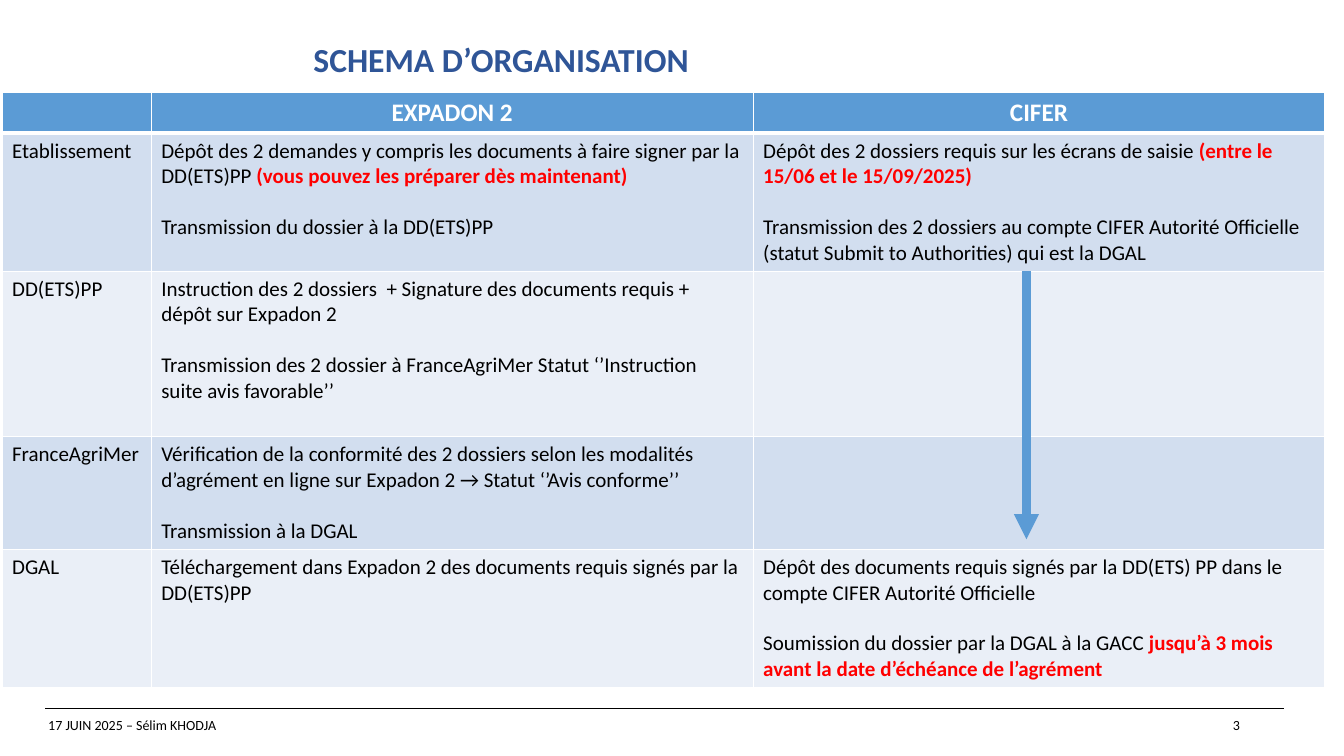
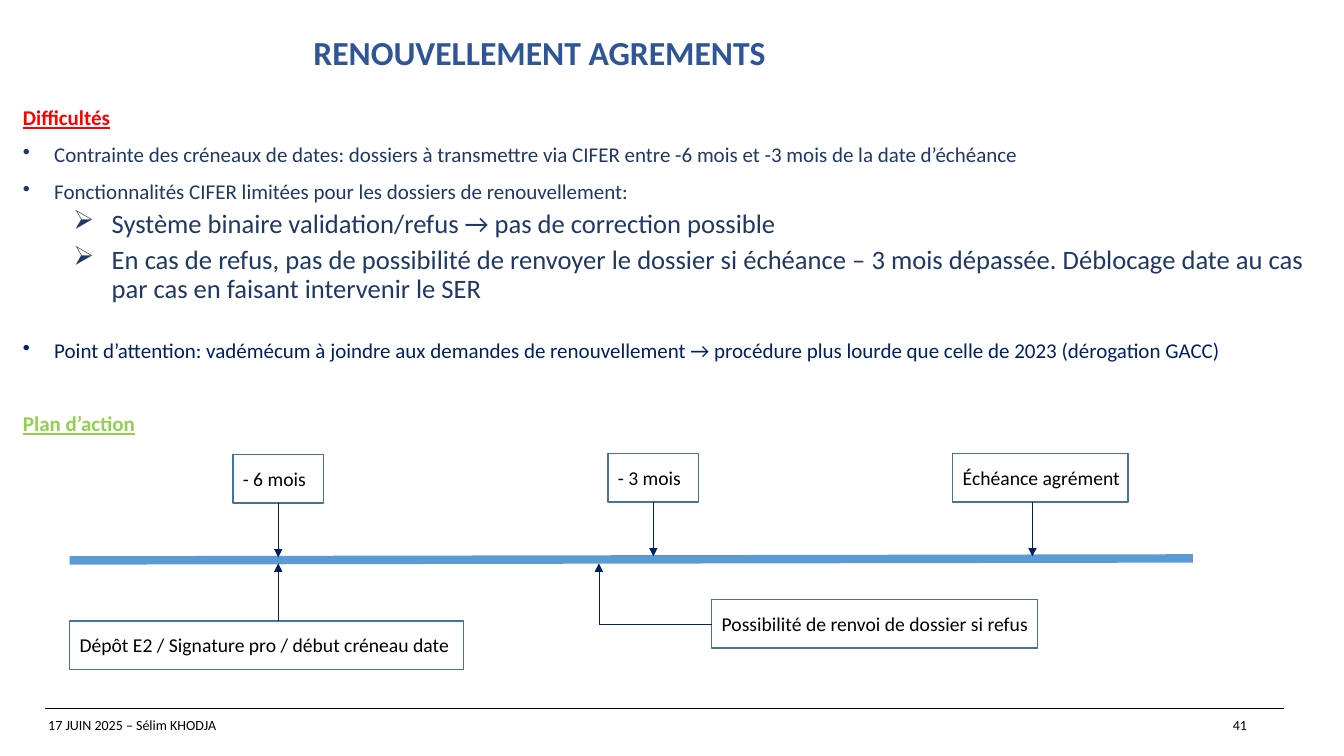
from lxml.etree import SubElement
from pptx import Presentation
from pptx.dml.color import RGBColor
from pptx.enum.shapes import MSO_CONNECTOR, MSO_SHAPE
from pptx.enum.text import MSO_ANCHOR as Anchor, PP_ALIGN as Align
from pptx.oxml.ns import qn
from pptx.util import Pt

PX = 9144
FONT = "Calibri"
BLACK = RGBColor(0x00, 0x00, 0x00)
WHITE = RGBColor(0xFF, 0xFF, 0xFF)
RED = RGBColor(0xFF, 0x00, 0x00)
GREEN = RGBColor(0x92, 0xD0, 0x50)
BLUE = RGBColor(0x5B, 0x9B, 0xD5)
TITLE_BLUE = RGBColor(0x2F, 0x55, 0x97)
TEXT_BLUE = RGBColor(0x20, 0x38, 0x64)
NAVY = RGBColor(0x00, 0x20, 0x60)
BOX_LINE = RGBColor(0x43, 0x73, 0x9E)
BANDS = (RGBColor(0xD2, 0xDE, 0xEF), RGBColor(0xEA, 0xEF, 0xF7))

COLUMN_WIDTHS = (148, 597, 567)
ROW_HEIGHTS = (40, 137, 164, 112, 137)
HEADERS = ("", "EXPADON 2", "CIFER")
ROWS = (
    (
        ["Etablissement"],
        [
            ("Dépôt des 2 demandes y compris les documents à faire signer par la DD(ETS)PP ",
             "(vous pouvez les préparer dès maintenant)"),
            "Transmission du dossier à la DD(ETS)PP",
        ],
        [
            ("Dépôt des 2 dossiers requis sur les écrans de saisie ",
             "(entre le 15/06 et le 15/09/2025)"),
            "Transmission des 2 dossiers au compte CIFER Autorité Officielle "
            "(statut Submit to Authorities) qui est la DGAL",
        ],
    ),
    (
        ["DD(ETS)PP"],
        [
            "Instruction des 2 dossiers  + Signature des documents requis + dépôt sur Expadon 2",
            "Transmission des 2 dossier à FranceAgriMer Statut ‘’Instruction suite avis favorable’’",
        ],
        [],
    ),
    (
        ["FranceAgriMer"],
        [
            "Vérification de la conformité des 2 dossiers selon les modalités d’agrément "
            "en ligne sur Expadon 2 → Statut ‘’Avis conforme’’",
            "Transmission à la DGAL",
        ],
        [],
    ),
    (
        ["DGAL"],
        ["Téléchargement dans Expadon 2 des documents requis signés par la DD(ETS)PP"],
        [
            "Dépôt des documents requis signés par la DD(ETS) PP dans le compte "
            "CIFER Autorité Officielle",
            ("Soumission du dossier par la DGAL à la GACC ",
             "jusqu’à 3 mois avant la date d’échéance de l’agrément"),
        ],
    ),
)

HEADING = dict(bold=True, underline=True)
BULLET = dict(bullet="•", margin=31, hanging=31, before=10)
ARROW_BULLET = dict(bullet="➢", margin=88, hanging=38, before=5, level=1, size=19)
BODY = (
    ("Difficultés", dict(HEADING, color=RED)),
    ("Contrainte des créneaux de dates: dossiers à transmettre via CIFER "
     "entre -6 mois et -3 mois de la date d’échéance", BULLET),
    ("Fonctionnalités CIFER limitées pour les dossiers de renouvellement:", BULLET),
    ("Système binaire validation/refus → pas de correction possible", ARROW_BULLET),
    ("En cas de refus, pas de possibilité de renvoyer le dossier si échéance – 3 mois dépassée. "
     "Déblocage date au cas par cas en faisant intervenir le SER", ARROW_BULLET),
    ("Point d’attention: vadémécum à joindre aux demandes de renouvellement → "
     "procédure plus lourde que celle de 2023 (dérogation GACC)",
     dict(BULLET, before=26, color=NAVY)),
    ("Plan d’action", dict(HEADING, before=36, color=GREEN)),
)


def add_bullet(paragraph, character, margin, hanging):
    properties = paragraph._p.get_or_add_pPr()
    properties.set("marL", str(margin * PX))
    properties.set("indent", str(-hanging * PX))
    SubElement(properties, qn("a:buChar"), char=character)


def write_text(frame, text, size=15, color=BLACK, bold=False, underline=False,
               align=Align.LEFT, spacing=None, before=0, level=0,
               bullet=None, margin=0, hanging=0):
    paragraph = frame.add_paragraph() if frame.text else frame.paragraphs[0]
    paragraph.alignment = align
    paragraph.level = level
    paragraph.space_before = Pt(before)
    if spacing:
        paragraph.line_spacing = spacing
    if bullet:
        add_bullet(paragraph, bullet, margin, hanging)
    plain, *alert = (text,) if isinstance(text, str) else text
    for words, tint, weight in [(plain, color, bold), *((part, RED, True) for part in alert)]:
        run = paragraph.add_run()
        run.text = words
        font = run.font
        font.name, font.size, font.bold = FONT, Pt(size), weight
        font.underline = underline
        font.color.rgb = tint


def add_frame(slide, left, top, width, height, anchor=Anchor.TOP, wrap=True):
    box = slide.shapes.add_textbox(left * PX, top * PX, width * PX, height * PX)
    frame = box.text_frame
    frame.word_wrap = wrap
    frame.vertical_anchor = anchor
    return frame


def add_line(slide, start, end, color, width, arrow=False, box=None, site=0):
    points = [value * PX for value in (*start, *end)]
    connector = slide.shapes.add_connector(MSO_CONNECTOR.STRAIGHT, *points)
    if box is not None:
        connector.begin_connect(box, site)
    connector.line.color.rgb = color
    connector.line.width = Pt(width)
    properties = connector.element.spPr
    if arrow:
        SubElement(properties.find(qn("a:ln")), qn("a:tailEnd"), type="triangle")
    SubElement(properties, qn("a:effectLst"))


def add_label(slide, text, left, top, width):
    box = slide.shapes.add_shape(
        MSO_SHAPE.RECTANGLE, left * PX, top * PX, width * PX, 48 * PX)
    box.shadow.inherit = False
    box.fill.solid()
    box.fill.fore_color.rgb = WHITE
    box.line.color.rgb = BOX_LINE
    box.line.width = Pt(1)
    box.text_frame.word_wrap = False
    box.text_frame.vertical_anchor = Anchor.MIDDLE
    write_text(box.text_frame, text, size=14)
    return box


def style_cell(cell, fill, bottom):
    properties = cell._tc.get_or_add_tcPr()
    for side, width in (("L", 1), ("R", 1), ("T", 1), ("B", bottom)):
        border = SubElement(properties, qn(f"a:ln{side}"), w=str(Pt(width)))
        solid = SubElement(border, qn("a:solidFill"))
        SubElement(solid, qn("a:srgbClr"), val=str(WHITE))
    cell.fill.solid()
    cell.fill.fore_color.rgb = fill


def add_organisation_table(slide):
    table = slide.shapes.add_table(
        len(ROW_HEIGHTS), len(COLUMN_WIDTHS), 2 * PX, 92 * PX,
        sum(COLUMN_WIDTHS) * PX, sum(ROW_HEIGHTS) * PX).table
    for column, width in zip(table.columns, COLUMN_WIDTHS):
        column.width = width * PX
    for row, height in zip(table.rows, ROW_HEIGHTS):
        row.height = height * PX
    for cell, header in zip(table.rows[0].cells, HEADERS):
        style_cell(cell, BLUE, 3)
        if header:
            write_text(cell.text_frame, header, size=18, color=WHITE, bold=True,
                       align=Align.CENTER)
    for index, contents in enumerate(ROWS):
        for cell, texts in zip(table.rows[index + 1].cells, contents):
            style_cell(cell, BANDS[index % 2], 1)
            for position, text in enumerate(texts):
                write_text(cell.text_frame, text, before=18 if position else 0)


def add_slide(presentation, title, title_top, number):
    slide = presentation.slides.add_slide(presentation.slide_layouts[6])
    write_text(add_frame(slide, 301, title_top, 569, 48, Anchor.MIDDLE), title,
               size=24, color=TITLE_BLUE, bold=True, spacing=0.9)
    add_line(slide, (45, 703), (1274, 703), BLACK, 0.8)
    write_text(add_frame(slide, 38, 706, 959, 27), "17 JUIN 2025 – Sélim KHODJA", size=10)
    write_text(add_frame(slide, 1213, 706, 47, 27, wrap=False), number, size=10)
    return slide


def add_timeline(slide):
    add_line(slide, (69, 556), (1183, 554), BLUE, 6)
    arrow = dict(color=NAVY, width=0.5, arrow=True)
    six_months = add_label(slide, "- 6 mois", 231, 451, 90)
    three_months = add_label(slide, "- 3 mois", 603, 450, 90)
    add_label(slide, "Échéance agrément", 945, 450, 174)
    add_label(slide, "Dépôt E2 / Signature pro / début créneau date", 69, 616, 391)
    resend = add_label(slide, "Possibilité de renvoi de dossier si refus", 706, 595, 323)
    add_line(slide, (276, 499), (276, 553), box=six_months, site=2, **arrow)
    add_line(slide, (648, 498), (648, 552), box=three_months, site=2, **arrow)
    add_line(slide, (1024, 498), (1024, 552), **arrow)
    add_line(slide, (276, 616), (276, 559), **arrow)
    add_line(slide, (706, 619), (594, 619), NAVY, 0.5, box=resend, site=1)
    add_line(slide, (594, 619), (594, 559), **arrow)


def main():
    presentation = Presentation()
    presentation.slide_width = 1333 * PX
    presentation.slide_height = 750 * PX

    organisation = add_slide(presentation, "SCHEMA D’ORGANISATION", 37, "3")
    add_organisation_table(organisation)
    add_line(organisation, (1018, 269), (1018, 535), BLUE, 6, arrow=True)

    renewal = add_slide(presentation, "RENOUVELLEMENT AGREMENTS", 30, "41")
    body = add_frame(renewal, 13, 102, 1290, 340)
    for text, style in BODY:
        write_text(body, text, **{"color": TEXT_BLUE, "align": Align.JUSTIFY,
                                  "spacing": 0.9, **style})
    add_timeline(renewal)

    presentation.save("out.pptx")


if __name__ == "__main__":
    main()
